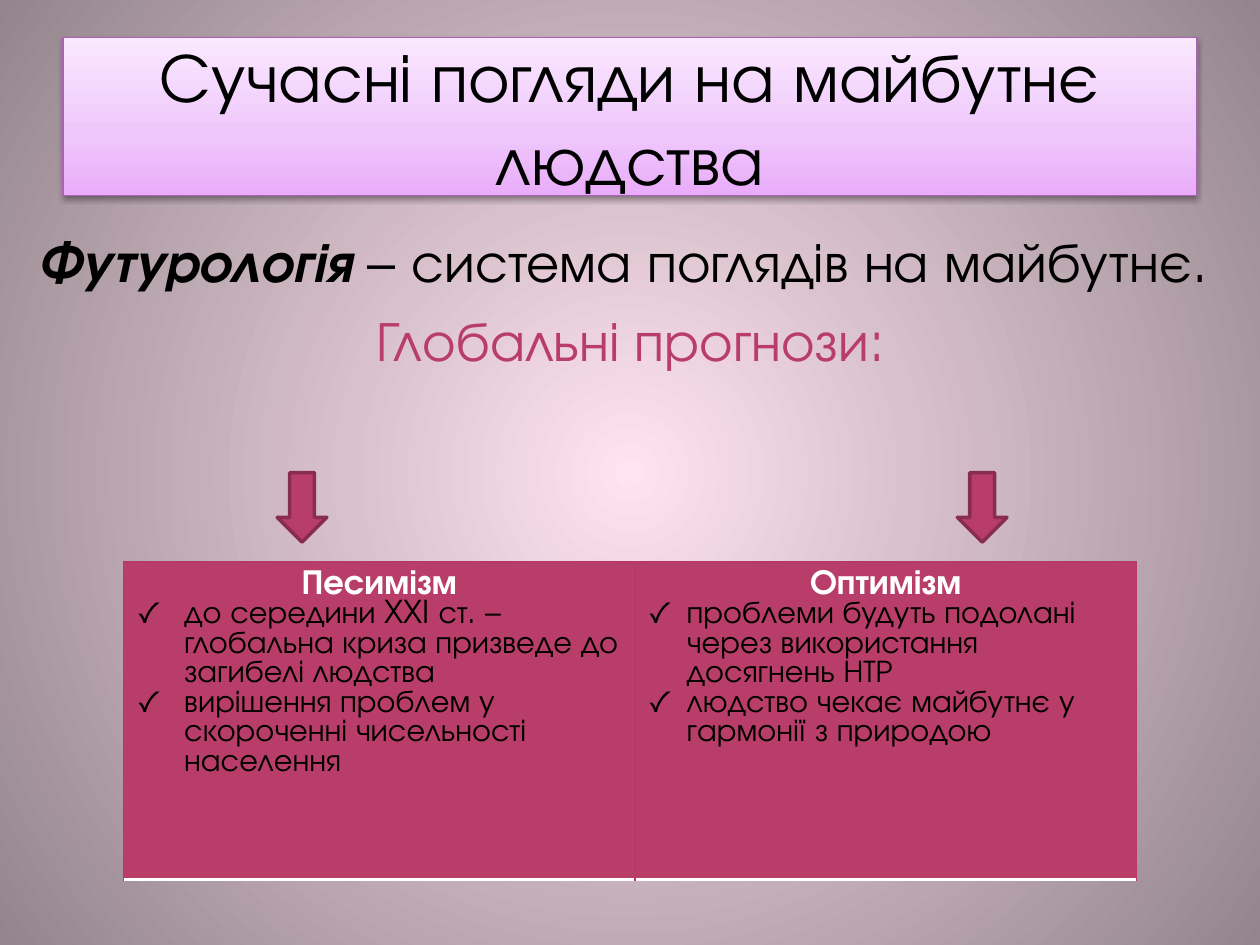
"""Build the slide on modern views of the future of humankind."""
from pptx import Presentation
from pptx.dml.color import RGBColor
from pptx.enum.shapes import MSO_SHAPE as Shape
from pptx.enum.text import MSO_ANCHOR as Anchor, PP_ALIGN as Align
from pptx.oxml import parse_xml
from pptx.oxml.ns import nsdecls, qn
from pptx.util import Cm, Pt

COLORS = {
    "text": "000000", "white": "FFFFFF", "accent": "B83D68",
    "arrow_line": "882D4D", "cell_line": "B73965", "title_line": "AA62B9",
}
GLOW = [(0, "FFE3F0"), (100, "94858C")]
LILAC = [(0, "E9ACFA"), (35, "EFC5FB"), (100, "F9E8FE")]
FONT = "TeX Gyre Adventor"


def set_gradient(owner, stops, direction):
    stop_xml = "".join(
        f'<a:gs pos="{position * 1000}"><a:srgbClr val="{color}"/></a:gs>'
        for position, color in stops)
    owner.replace(owner.find(qn("a:solidFill")), parse_xml(
        f'<a:gradFill {nsdecls("a")} rotWithShape="1">'
        f'<a:gsLst>{stop_xml}</a:gsLst>{direction}</a:gradFill>'))


def style_run(run, size, color="text", bold=False, italic=False):
    run.font.name = FONT
    run.font.size = Pt(size)
    run.font.bold = bold
    run.font.italic = italic
    run.font.color.rgb = RGBColor.from_string(COLORS[color])


deck = Presentation()
deck.slide_width, deck.slide_height = Cm(25.4), Cm(19.05)
slide = deck.slides.add_slide(deck.slide_layouts[6])
slide.background.fill.solid()
set_gradient(
    slide.element.find(".//" + qn("p:bgPr")), GLOW,
    '<a:path path="circle"><a:fillToRect l="50000" t="50000" r="50000" b="50000"/></a:path>')

title = slide.shapes.add_shape(Shape.RECTANGLE, Cm(1.27), Cm(0.76), Cm(22.86), Cm(3.18))
title.fill.solid()
title.line.color.rgb = RGBColor.from_string(COLORS["title_line"])
title.line.width = Pt(0.75)
set_gradient(title.element.spPr, LILAC, '<a:lin ang="16200000" scaled="1"/>')
title.element.spPr.append(parse_xml(
    f'<a:effectLst {nsdecls("a")}>'
    f'<a:outerShdw blurRad="{Pt(3.1)}" dist="{Pt(1.6)}" dir="5400000" rotWithShape="0">'
    f'<a:srgbClr val="{COLORS["text"]}"><a:alpha val="38000"/></a:srgbClr>'
    '</a:outerShdw></a:effectLst>'))
title.text_frame.text = "Сучасні погляди на майбутнє людства"
title.text_frame.word_wrap = True
title.text_frame.vertical_anchor = Anchor.MIDDLE
heading = title.text_frame.paragraphs[0]
heading.alignment = Align.CENTER
style_run(heading.runs[0], 39.6)

body = slide.shapes.add_textbox(Cm(0.51), Cm(4.45), Cm(24.41), Cm(13.69)).text_frame
body.word_wrap = True
definition = body.paragraphs[0]
for words, is_term in [("Футурологія", True), (" – система поглядів на майбутнє.", False)]:
    part = definition.add_run()
    part.text = words
    style_run(part, 32, bold=is_term, italic=is_term)
forecasts = body.add_paragraph()
forecasts.text = "Глобальні прогнози:"
forecasts.alignment = Align.CENTER
style_run(forecasts.runs[0], 32, "accent")
for paragraph in body.paragraphs:
    paragraph.space_before = Pt(6.4)

for left in (5.59, 19.3):
    arrow = slide.shapes.add_shape(Shape.DOWN_ARROW, Cm(left), Cm(9.53), Cm(1), Cm(1.4))
    arrow.shadow.inherit = False
    arrow.fill.solid()
    arrow.fill.fore_color.rgb = RGBColor.from_string(COLORS["accent"])
    arrow.line.color.rgb = RGBColor.from_string(COLORS["arrow_line"])
    arrow.line.width = Pt(2)

OUTLOOKS = [
    ("Песимізм", 10.31, 0.97, [
        "до середини XXI ст. – глобальна криза призведе до загибелі людства",
        "вирішення проблем у скороченні чисельності населення"]),
    ("Оптимізм", 10.11, 0.79, [
        "проблеми будуть подолані через використання досягнень НТР",
        "людство чекає майбутнє у гармонії з природою"]),
]
BORDERS = [("lnL", "cell_line", 0.75), ("lnR", "cell_line", 0.75),
           ("lnT", "cell_line", 0.75), ("lnB", "white", 2)]
outlook_table = slide.shapes.add_table(
    1, 2, Cm(2.49), Cm(11.33), Cm(20.42), Cm(6.4)).table
for column, (outlook, width, indent, claims) in enumerate(OUTLOOKS):
    outlook_table.columns[column].width = Cm(width)
    cell = outlook_table.cell(0, column)
    cell.fill.solid()
    cell.fill.fore_color.rgb = RGBColor.from_string(COLORS["accent"])
    properties = cell._tc.get_or_add_tcPr()
    for order, (side, color, weight) in enumerate(BORDERS):
        properties.insert(order, parse_xml(
            f'<a:{side} {nsdecls("a")} w="{Pt(weight)}"><a:solidFill>'
            f'<a:srgbClr val="{COLORS[color]}"/></a:solidFill></a:{side}>'))
    cell.text_frame.text = "\n".join([outlook, *claims])
    label, *points = cell.text_frame.paragraphs
    label.alignment = Align.CENTER
    style_run(label.runs[0], 20, "white", bold=True)
    for point in points:
        style_run(point.runs[0], 18)
        layout = point._p.get_or_add_pPr()
        layout.set("marL", str(Cm(indent)))
        layout.set("indent", str(-Cm(indent)))
        layout.append(parse_xml(f'<a:buFont {nsdecls("a")} typeface="{FONT}"/>'))
        layout.append(parse_xml(f'<a:buChar {nsdecls("a")} char="✓"/>'))

deck.save("out.pptx")
